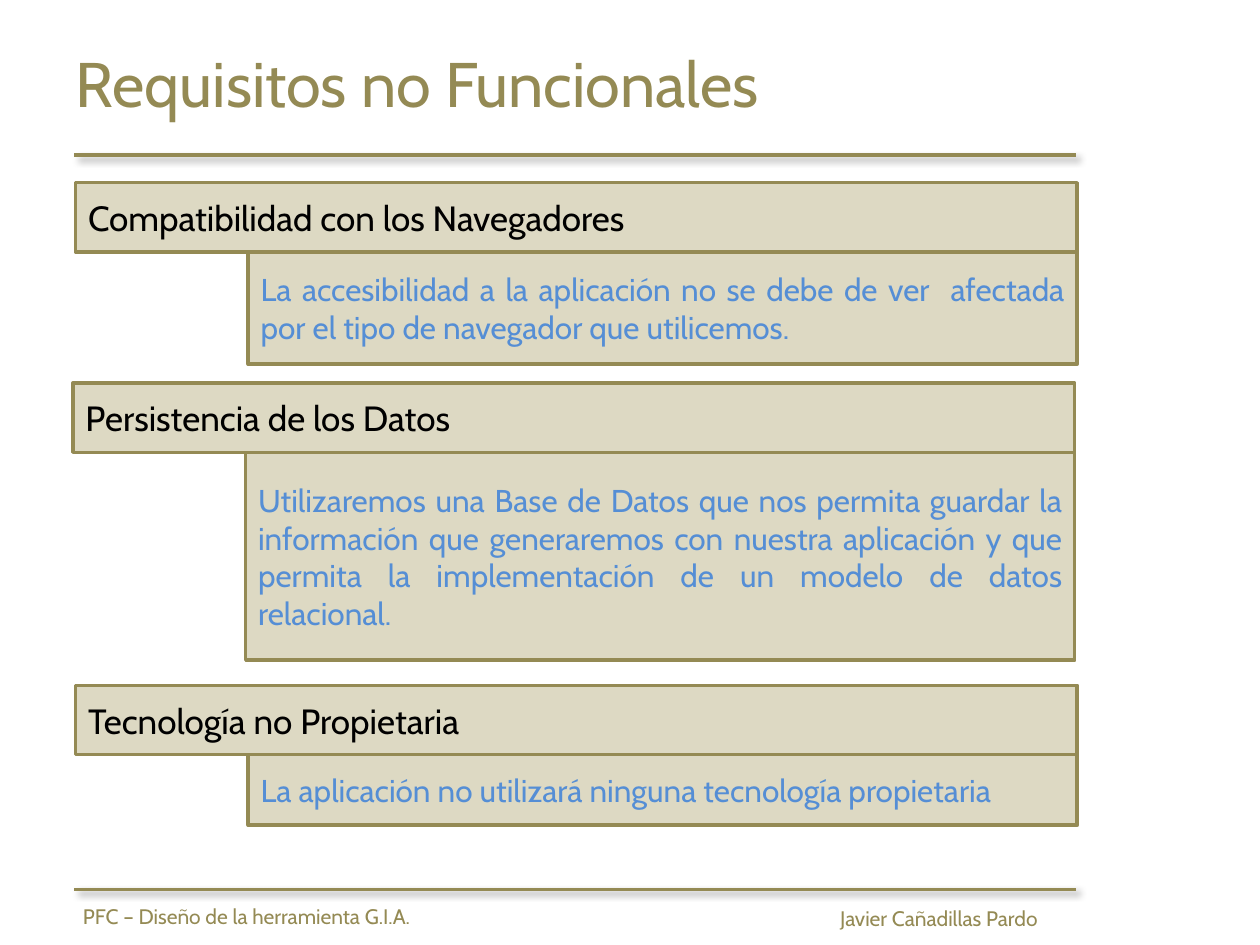
from lxml import etree
from pptx import Presentation
from pptx.dml.color import RGBColor
from pptx.enum.shapes import MSO_CONNECTOR, MSO_SHAPE
from pptx.enum.text import MSO_ANCHOR, MSO_AUTO_SIZE, PP_ALIGN
from pptx.oxml import parse_xml
from pptx.oxml.ns import nsdecls
from pptx.util import Inches, Pt

OLIVE = RGBColor(0x94, 0x8A, 0x54)
SAND = RGBColor(0xDD, 0xD9, 0xC3)
BLUE = RGBColor(0x55, 0x8E, 0xD5)
BLACK = RGBColor(0, 0, 0)
FONT = "Cabin"

HEADING_WIDTH, HEADING_HEIGHT = 7.95, 0.55
DETAIL_INDENT = 1.37

# left, top, heading, detail, detail height
REQUIREMENTS = [
    (0.6, 1.45, "Compatibilidad con los Navegadores",
     "La accesibilidad a la aplicación no se debe de ver  afectada por el tipo "
     "de navegador que utilicemos.", 0.89),
    (0.58, 3.04, "Persistencia de los Datos",
     "Utilizaremos una Base de Datos que nos permita guardar la información que "
     "generaremos con nuestra aplicación y que permita la implementación de un "
     "modelo de datos relacional.", 1.65),
    (0.6, 5.44, "Tecnología no Propietaria",
     "La aplicación no utilizará ninguna tecnología propietaria", 0.56),
]

# left, top, width, text
FOOTERS = [
    (6.57, 7.14, 1.94, "Javier Cañadillas Pardo"),
    (0.56, 7.12, 3.03, "PFC – Diseño de la herramienta G.I.A."),
]


def write(frame, text, size, color, align=PP_ALIGN.LEFT, **frame_format):
    for name, value in frame_format.items():
        setattr(frame, name, value)
    paragraph = frame.paragraphs[0]
    paragraph.alignment = align
    run = paragraph.add_run()
    run.text = text
    for name, value in {"name": FONT, "size": Pt(size)}.items():
        setattr(run.font, name, value)
    run.font.color.rgb = color


def add_title(slide, text):
    title = slide.shapes.title
    place = {"left": 0.5, "top": 0.3, "width": 9, "height": 1.25}
    for name, value in place.items():
        setattr(title, name, Inches(value))
    write(title.text_frame, text, 36, OLIVE, vertical_anchor=MSO_ANCHOR.TOP,
          word_wrap=True, auto_size=MSO_AUTO_SIZE.NONE)


def add_rule(shapes, top):
    """Horizontal line with a soft shadow below and to the right."""
    rule = shapes.add_connector(MSO_CONNECTOR.STRAIGHT, Inches(0.59), Inches(top),
                                Inches(8.54), Inches(top))
    rule.line.color.rgb = OLIVE
    rule.line.width = Pt(1.75)
    effects = parse_xml(f"<a:effectLst {nsdecls('a')}/>")
    shadow = etree.SubElement(
        effects, effects.tag.replace("effectLst", "outerShdw"),
        blurRad=str(Pt(4)), dist=str(Pt(3)), dir=str(45 * 60000),
        algn="tl", rotWithShape="0")
    color = etree.SubElement(
        shadow, effects.tag.replace("effectLst", "srgbClr"), val="000000")
    etree.SubElement(
        color, effects.tag.replace("effectLst", "alpha"), val="40000")
    rule._element.spPr.append(effects)


def add_box(shapes, left, top, width, height, text, size, color, align):
    box = shapes.add_shape(MSO_SHAPE.RECTANGLE, Inches(left), Inches(top),
                           Inches(width), Inches(height))
    box.shadow.inherit = False
    box.fill.solid()
    box.fill.fore_color.rgb = SAND
    box.line.color.rgb = OLIVE
    box.line.width = Pt(2)
    write(box.text_frame, text, size, color, align,
          vertical_anchor=MSO_ANCHOR.MIDDLE, word_wrap=True)


def add_requirement(slide, left, top, heading, detail, detail_height):
    shapes = slide.shapes.add_group_shape().shapes
    add_box(shapes, left, top, HEADING_WIDTH, HEADING_HEIGHT,
            heading, 20, BLACK, PP_ALIGN.LEFT)
    add_box(shapes, left + DETAIL_INDENT, top + HEADING_HEIGHT,
            HEADING_WIDTH - DETAIL_INDENT, detail_height,
            detail, 18, BLUE, PP_ALIGN.JUSTIFY)


def add_footer(slide):
    shapes = slide.shapes.add_group_shape().shapes
    add_rule(shapes, 7.06)
    for left, top, width, text in FOOTERS:
        label = shapes.add_textbox(Inches(left), Inches(top),
                                   Inches(width), Inches(0.3))
        write(label.text_frame, text, 12, OLIVE, word_wrap=False,
              auto_size=MSO_AUTO_SIZE.SHAPE_TO_FIT_TEXT)


def main():
    deck = Presentation()
    deck.slide_width, deck.slide_height = Inches(10), Inches(7.5)
    slide = deck.slides.add_slide(deck.slide_layouts[5])

    # Heading
    add_title(slide, "Requisitos no Funcionales")
    add_rule(slide.shapes, 1.23)

    # Requirements, each a heading with its detail below
    for requirement in REQUIREMENTS:
        add_requirement(slide, *requirement)

    # Footer
    add_footer(slide)
    deck.save("out.pptx")


if __name__ == "__main__":
    main()
